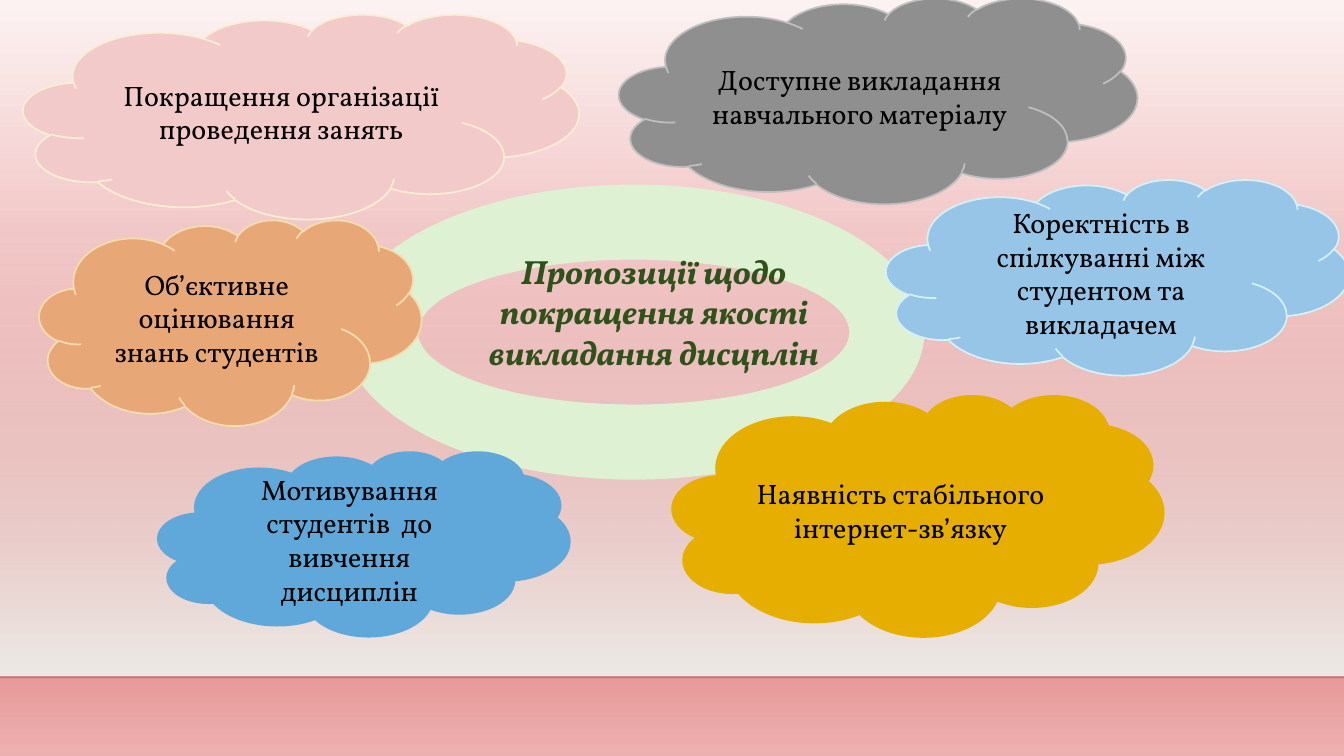
"""Build a slide of proposals in clouds around a central ring."""
from dataclasses import dataclass
from typing import Any, Optional

import pptx
import pptx.dml.color
import pptx.enum.shapes
import pptx.enum.text
import pptx.oxml
import pptx.oxml.ns
import pptx.util
from lxml import etree

FONT = "Vollkorn"
SLIDE_WIDTH = pptx.util.Inches(13.33)
SLIDE_HEIGHT = pptx.util.Inches(7.5)
HORIZON = 89.6


@dataclass(frozen=True)
class Area:
    """A rectangle in percent of the slide's width and height."""

    left: float
    top: float
    width: float
    height: float

    def lengths(self) -> tuple[int, int, int, int]:
        """Return left, top, width and height in slide units."""
        return (
            across(self.left),
            down(self.top),
            across(self.width),
            down(self.height),
        )


@dataclass(frozen=True)
class Cloud:
    """One proposal with its place and colours."""

    text: str
    area: Area
    fill: str
    outline: str


@dataclass(frozen=True)
class Stop:
    """A gradient stop, with position and opacity in percent."""

    position: int
    colour: str
    opacity: int = 100


RING = Area(25.58, 24.53, 43.14, 38.8)
TITLE = Area(33.98, 32.53, 29.33, 17.47)
HAZE = Area(0, 29.33, 100, 60)

BACKDROP_STOPS = [
    Stop(0, "FCF2F2"),
    Stop(74, "E48989"),
    Stop(83, "E48989"),
    Stop(100, "EDB0B0"),
]
HAZE_STOPS = [Stop(0, "EDEBE7", 0), Stop(100, "EDEBE7")]

CLOUDS = [
    Cloud("Доступне викладання навчального матеріалу",
          Area(46.06, -0.27, 38.56, 27.2), "8F8F8F", "BFBFBF"),
    Cloud("Коректність в спілкуванні між студентом та викладачем",
          Area(65.94, 23.73, 34.43, 25.87), "96C5E7", "D4F1F5"),
    Cloud("Об’єктивне оцінювання знань студентів",
          Area(2.93, 29.07, 28.43, 27.2), "E8A777", "F1DDAE"),
    Cloud("Покращення організації проведення занять",
          Area(1.73, 1.87, 41.34, 27.07), "F3CACA", "F8EED6"),
    Cloud("Мотивування студентів  до вивчення дисциплін",
          Area(11.78, 59.73, 30.61, 24.4), "61A8DA", "61A8DA"),
    Cloud("Наявність стабільного інтернет-зв’язку",
          Area(50.04, 52.27, 36.53, 31.87), "E6AF00", "E6AF00"),
]


def across(percent: float) -> int:
    """Return a share of the slide's width."""
    return round(SLIDE_WIDTH * percent / 100)


def down(percent: float) -> int:
    """Return a share of the slide's height."""
    return round(SLIDE_HEIGHT * percent / 100)


def colour(value: str) -> pptx.dml.color.RGBColor:
    """Turn a hex string into a colour."""
    return pptx.dml.color.RGBColor.from_string(value)


def add_opacity(colour_element: Any, percent: int) -> None:
    """Make a colour element partly transparent."""
    alpha = etree.SubElement(colour_element, pptx.oxml.ns.qn("a:alpha"))
    alpha.set("val", str(percent * 1000))


def paint_gradient(owner: Any, fill: Any, stops: list[Stop]) -> None:
    """Fill the owner from top to bottom through the given stops."""
    fill.gradient()
    fill.gradient_angle = 270
    stop_list = next(owner.element.iter(pptx.oxml.ns.qn("a:gsLst")))
    for old_stop in list(stop_list):
        stop_list.remove(old_stop)
    for stop in stops:
        entry = etree.SubElement(stop_list, pptx.oxml.ns.qn("a:gs"))
        entry.set("pos", str(stop.position * 1000))
        tint = etree.SubElement(entry, pptx.oxml.ns.qn("a:srgbClr"))
        tint.set("val", stop.colour)
        if stop.opacity < 100:
            add_opacity(tint, stop.opacity)


def write_text(shape: Any, text: str, size: int, text_colour: str,
               emphasis: Optional[bool] = None) -> None:
    """Write one centred paragraph into a shape."""
    shape.text_frame.word_wrap = True
    para = shape.text_frame.paragraphs[0]
    para.text = text
    para.alignment = pptx.enum.text.PP_ALIGN.CENTER
    para.line_spacing = 1.0
    para.font.name = FONT
    para.font.size = pptx.util.Pt(size)
    para.font.bold = emphasis
    para.font.italic = emphasis
    para.font.color.rgb = colour(text_colour)


def add_figure(page: Any, kind: Any, area: Area, fill: str,
               outline: str) -> Any:
    """Add a filled and outlined preset shape."""
    shape = page.shapes.add_shape(kind, *area.lengths())
    shape.shadow.inherit = False
    shape.fill.solid()
    shape.fill.fore_color.rgb = colour(fill)
    shape.line.color.rgb = colour(outline)
    shape.line.width = pptx.util.Pt(1.25)
    return shape


def add_scenery(page: Any) -> None:
    """Paint the background, the haze and the horizon line."""
    paint_gradient(page, page.background.fill, BACKDROP_STOPS)
    haze = page.shapes.add_shape(
        pptx.enum.shapes.MSO_SHAPE.RECTANGLE, *HAZE.lengths())
    haze.shadow.inherit = False
    haze.line.fill.background()
    paint_gradient(haze, haze.fill, HAZE_STOPS)
    horizon = page.shapes.add_connector(
        pptx.enum.shapes.MSO_CONNECTOR.STRAIGHT,
        0, down(HORIZON), SLIDE_WIDTH, down(HORIZON))
    horizon.line.width = pptx.util.Pt(1)
    horizon.line.color.rgb = colour("000001")
    add_opacity(next(horizon.element.iter(pptx.oxml.ns.qn("a:srgbClr"))), 20)
    etree.SubElement(horizon.element.spPr, pptx.oxml.ns.qn("a:effectLst"))


def place_title(page: Any) -> None:
    """Set the title inside the ring, in front of it."""
    title = page.shapes.title
    title.left, title.top, title.width, title.height = TITLE.lengths()
    frame = title.text_frame
    frame.vertical_anchor = pptx.enum.text.MSO_ANCHOR.TOP
    frame.auto_size = pptx.enum.text.MSO_AUTO_SIZE.SHAPE_TO_FIT_TEXT
    write_text(title, "Пропозиції щодо покращення якості викладання дисцплін",
               24, "2F521A", True)
    title.element.getparent().append(title.element)


def main() -> None:
    """Build and save the deck."""
    deck = pptx.Presentation()
    deck.slide_width, deck.slide_height = SLIDE_WIDTH, SLIDE_HEIGHT
    page = deck.slides.add_slide(deck.slide_layouts.get_by_name("Title Only"))
    add_scenery(page)
    add_figure(page, pptx.enum.shapes.MSO_SHAPE.DONUT, RING,
               "DEF1D2", "DEF1D2")
    for cloud in CLOUDS:
        shape = add_figure(page, pptx.enum.shapes.MSO_SHAPE.CLOUD, cloud.area,
                           cloud.fill, cloud.outline)
        write_text(shape, cloud.text, 20, "000000")
    place_title(page)
    deck.save("out.pptx")


if __name__ == "__main__":
    main()
